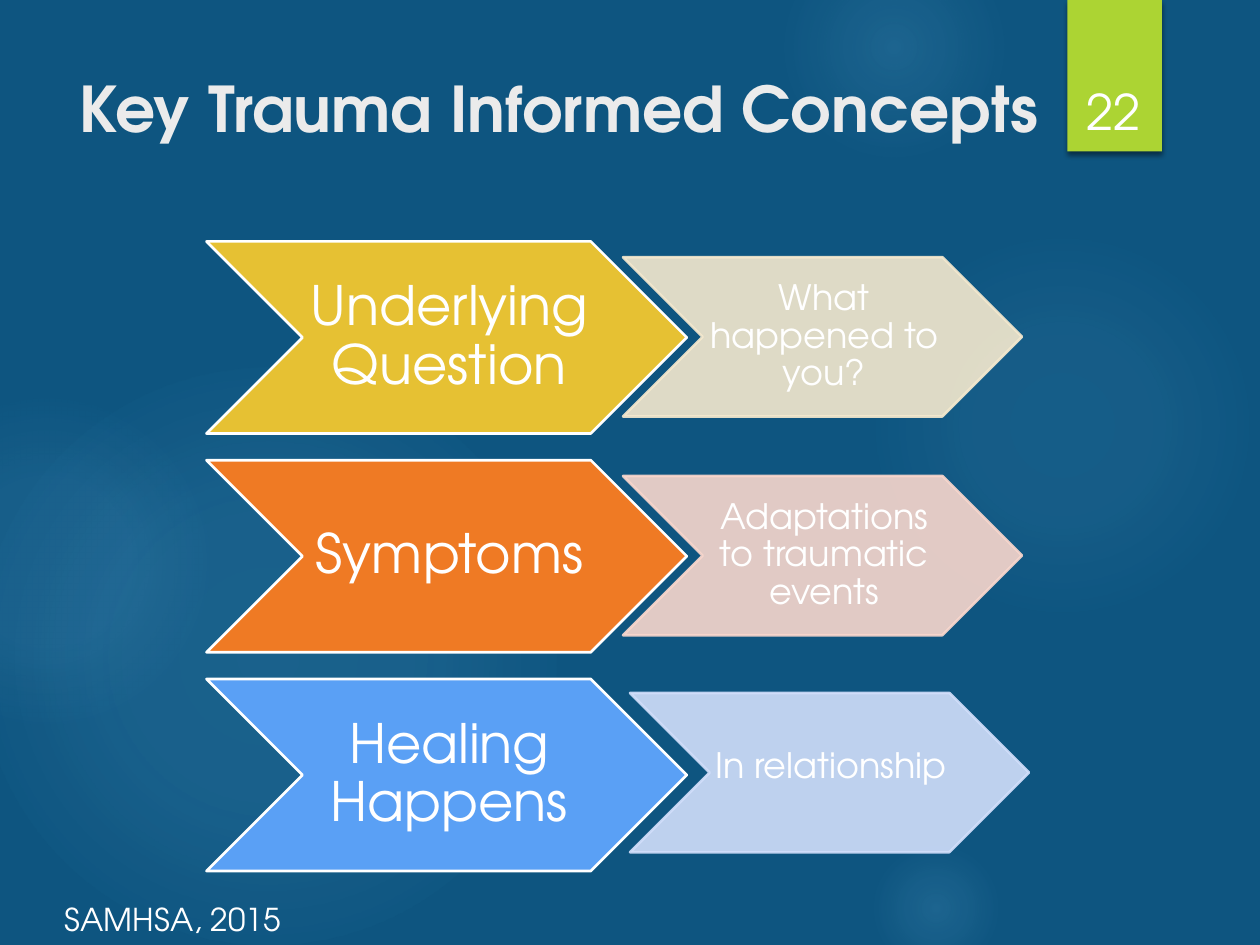
from lxml import etree
from pptx import Presentation
from pptx import oxml
from pptx.dml.color import RGBColor
from pptx.enum import shapes, text
from pptx.oxml import ns
from pptx.util import Pt

THEME = {
    "font": "TeX Gyre Adventor",
    "background": "0E5580", "glow": "7AC4F0", "tab": "ACD433",
    "title": "EBEBEB", "text": "FFFFFF", "shadow": "000000",
    "title_size": 36, "number_size": 28, "concept_size": 31,
    "answer_size": 20, "source_size": 18,
}
MIDDLE = text.MSO_ANCHOR.MIDDLE
CENTER = text.PP_ALIGN.CENTER


def write(shape, wording, size, color=THEME["text"], bold=False, margins=None,
          frame_format=None, paragraph_format=None):
    """Fill a shape with one formatted paragraph; margins are left, top, right, bottom."""
    frame = shape.text_frame
    frame.text = wording
    paragraph = frame.paragraphs[0]
    sides = ("margin_left", "margin_top", "margin_right", "margin_bottom")
    frame_values = {"word_wrap": True, "auto_size": text.MSO_AUTO_SIZE.NONE}
    frame_values.update(zip(sides, map(Pt, margins or (7.2, 3.6, 7.2, 3.6))))
    frame_values.update(frame_format or {})
    font_values = {"name": THEME["font"], "size": Pt(size), "bold": bold}
    for target, values in ((frame, frame_values), (paragraph, paragraph_format or {}),
                           (paragraph.runs[0].font, font_values)):
        for name, value in values.items():
            setattr(target, name, value)
    paragraph.runs[0].font.color.rgb = RGBColor.from_string(color)


def add_shape(kind, box, fill, line=None, opacity=100):
    shape = slide.shapes.add_shape(kind, *map(Pt, box))
    shape.shadow.inherit = False
    shape.fill.solid()
    shape.fill.fore_color.rgb = RGBColor.from_string(fill)
    if line:
        shape.line.color.rgb = RGBColor.from_string(line)
        shape.line.width = Pt(1.5)
    else:
        shape.line.fill.background()
    if opacity < 100:
        for color in shape._element.spPr.iter(ns.qn("a:srgbClr")):
            etree.SubElement(color, ns.qn("a:alpha"), val=str(opacity * 1000))
    return shape


presentation = Presentation()
presentation.slide_width, presentation.slide_height = Pt(720), Pt(540)
slide = presentation.slides.add_slide(presentation.slide_layouts[5])
slide.background.fill.solid()
slide.background.fill.fore_color.rgb = RGBColor.from_string(THEME["background"])

# Soft glows: left, top, diameter, gradient stops as (position, opacity)
glows = [
    (496, 132, 222, [(0, 7), (36, 6), (69, 0)]),
    (448, -36, 126, [(0, 14), (36, 7), (73, 0)]),
    (496, 480, 78, [(0, 14), (36, 7), (66, 0)]),
    (-12, 210, 330, [(0, 11), (36, 10), (75, 0)]),
    (-66, 228, 186, [(0, 8), (36, 8), (72, 0)]),
]
for left, top, diameter, stops in glows:
    glow = add_shape(shapes.MSO_SHAPE.OVAL, (left, top, diameter, diameter), THEME["glow"])
    stop_xml = "".join(
        f'<a:gs pos="{position * 1000}"><a:srgbClr val="{THEME["glow"]}">'
        f'<a:alpha val="{opacity * 1000}"/></a:srgbClr></a:gs>'
        for position, opacity in stops)
    gradient = oxml.parse_xml(
        f'<a:gradFill {ns.nsdecls("a")} rotWithShape="1"><a:gsLst>{stop_xml}</a:gsLst>'
        '<a:path path="circle"><a:fillToRect l="50000" t="50000" r="50000" b="50000"/>'
        '</a:path></a:gradFill>')
    properties = glow._element.spPr
    properties.replace(properties.find(ns.qn("a:solidFill")), gradient)

# Page tab with its shadow and number
tab = add_shape(shapes.MSO_SHAPE.RECTANGLE, (610, 0, 54, 86.5), THEME["tab"])
tab._element.spPr.find(ns.qn("a:effectLst")).append(oxml.parse_xml(
    f'<a:outerShdw {ns.nsdecls("a")} blurRad="{Pt(3)}" dist="{Pt(2)}" dir="5400000" '
    f'rotWithShape="0"><a:srgbClr val="{THEME["shadow"]}"><a:alpha val="45000"/>'
    '</a:srgbClr></a:outerShdw>'))
number = slide.shapes.add_textbox(Pt(611.5), Pt(23), Pt(50), Pt(60.5))
write(number, "22", THEME["number_size"],
      frame_format={"vertical_anchor": text.MSO_ANCHOR.BOTTOM},
      paragraph_format={"alignment": CENTER})

# Title, brought in front of the glows
title = slide.shapes.title
title.left, title.top, title.width, title.height = map(Pt, (38.5, 36, 597.5, 110))
write(title, "Key Trauma Informed Concepts", THEME["title_size"], THEME["title"], True,
      frame_format={"vertical_anchor": text.MSO_ANCHOR.TOP},
      paragraph_format={"alignment": text.PP_ALIGN.LEFT})
title._element.getparent().append(title._element)

# Chevron rows: concept, its colour, answer, its tint, answer left, drop, bottom margin
rows = [
    ("Underlying Question", "E6C133", "What happened to you?", "F5E9CE", 356, 9, 1),
    ("Symptoms", "EF7A24", "Adaptations to traumatic events", "F9D7CD", 356, 9, 1),
    ("Healing Happens", "5AA0F5", "In relationship", "D2DFFB", 360, 8, 7),
]
centered = {"alignment": CENTER, "line_spacing": 0.9}
for index, (concept, color, answer, tint, left, drop, bottom) in enumerate(rows):
    top = 138 + 125 * index
    chevron = add_shape(shapes.MSO_SHAPE.CHEVRON, (118, top, 274.5, 109.75), color,
                        THEME["text"])
    write(chevron, concept, THEME["concept_size"], margins=(3, 1.5, 0, 1.5),
          frame_format={"vertical_anchor": MIDDLE}, paragraph_format=centered)
    chevron = add_shape(shapes.MSO_SHAPE.CHEVRON, (left, top + drop, 228, 91), tint,
                        tint, 90)
    write(chevron, answer, THEME["answer_size"], margins=(2, 1, 0, bottom),
          frame_format={"vertical_anchor": MIDDLE}, paragraph_format=centered)

source = slide.shapes.add_textbox(Pt(30), Pt(511), Pt(142), Pt(29))
write(source, "SAMHSA, 2015", THEME["source_size"], frame_format={"word_wrap": False})

presentation.save("out.pptx")
